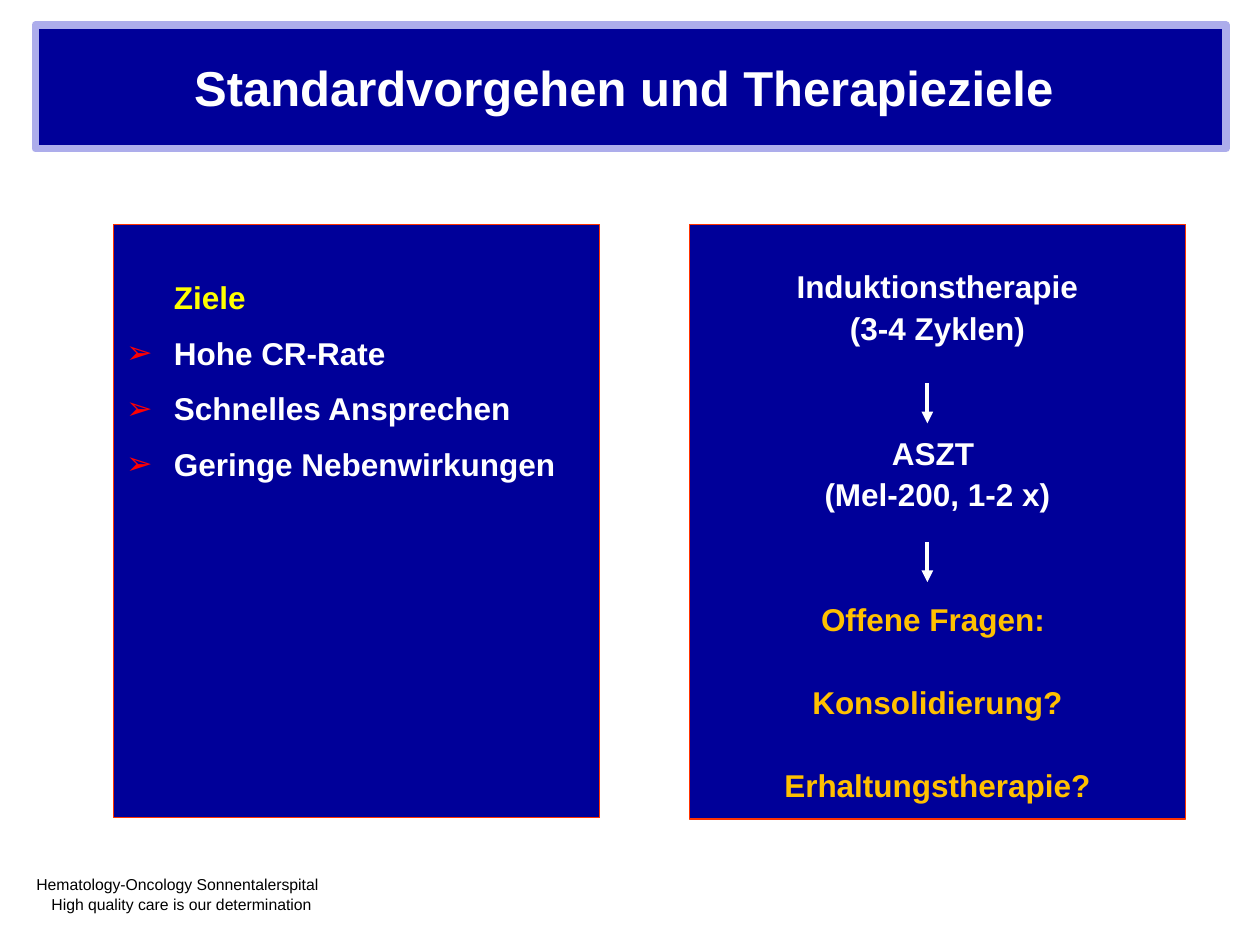
from dataclasses import dataclass

from lxml.etree import SubElement
from pptx import Presentation
from pptx.dml.color import RGBColor
from pptx.enum.shapes import MSO_CONNECTOR, MSO_SHAPE
from pptx.enum.text import MSO_ANCHOR, MSO_AUTO_SIZE, PP_ALIGN
from pptx.oxml.ns import qn
from pptx.util import Inches, Pt

NAVY, WHITE, BLACK = "000099", "FFFFFF", "000000"
LAVENDER, ORANGE_RED, RED = "ADADEB", "FF3300", "FF0000"
YELLOW, AMBER = "FFFF00", "FFC000"
LINE_PITCH = 23.8


@dataclass
class Line:
    text: str
    color: str = WHITE
    space_before: float = 0
    indent: float = 0
    bullet: str = ""


GOALS = [Line("Ziele", YELLOW, indent=0.38)] + [
    Line(text, space_before=3.6, indent=0.38, bullet="➢")
    for text in ("Hohe CR-Rate", "Schnelles Ansprechen", "Geringe Nebenwirkungen")
]
THERAPY_STEPS = [
    Line("Induktionstherapie"),
    Line("(3-4 Zyklen)"),
    Line("ASZT ", space_before=2 * LINE_PITCH),
    Line("(Mel-200, 1-2 x)"),
    Line("Offene Fragen: ", AMBER, 2 * LINE_PITCH),
    Line("Konsolidierung?", AMBER, LINE_PITCH),
    Line("Erhaltungstherapie?", AMBER, LINE_PITCH),
]
FOOTER = [
    Line("Hematology-Oncology Sonnentalerspital", BLACK, indent=0.19),
    Line("High quality care is our determination", BLACK, space_before=0.5, indent=0.31),
]


def rgb(color: str) -> RGBColor:
    return RGBColor.from_string(color)


def place(shape, left: float, top: float, width: float, height: float) -> None:
    shape.left, shape.top = Inches(left), Inches(top)
    shape.width, shape.height = Inches(width), Inches(height)


def style_box(shape, line_color: str, line_width: float) -> None:
    shape.fill.solid()
    shape.fill.fore_color.rgb = rgb(NAVY)
    shape.line.color.rgb = rgb(line_color)
    shape.line.width = Pt(line_width)


def set_bullet(paragraph, indent: float, bullet: str) -> None:
    properties = paragraph._p.get_or_add_pPr()
    properties.set("marL", str(Inches(indent)))
    properties.set("indent", str(-Inches(indent) if bullet else 0))
    if not bullet:
        SubElement(properties, qn("a:buNone"))
        return
    bullet_color = SubElement(properties, qn("a:buClr"))
    SubElement(bullet_color, qn("a:srgbClr"), val=RED)
    SubElement(properties, qn("a:buFont"), typeface="Arial")
    SubElement(properties, qn("a:buChar"), char=bullet)


def write_text(shape, lines: list[Line], *, size: float = 18, bold: bool = True,
               align=PP_ALIGN.LEFT, spacing: float = 1.0,
               anchor=MSO_ANCHOR.TOP, top_inset: float = 0.05) -> None:
    frame = shape.text_frame
    frame.word_wrap = True
    frame.auto_size = MSO_AUTO_SIZE.NONE
    frame.vertical_anchor = anchor
    frame.margin_top = Inches(top_inset)
    for index, line in enumerate(lines):
        paragraph = frame.add_paragraph() if index else frame.paragraphs[0]
        paragraph.alignment = align
        paragraph.line_spacing = spacing
        paragraph.space_before = Pt(line.space_before)
        set_bullet(paragraph, line.indent, line.bullet)
        run = paragraph.add_run()
        run.text = line.text
        run.font.name = "Arial"
        run.font.size = Pt(size)
        run.font.bold = bold
        run.font.color.rgb = rgb(line.color)


def add_down_arrow(slide, x: float, top: float, length: float) -> None:
    arrow = slide.shapes.add_connector(
        MSO_CONNECTOR.STRAIGHT, Inches(x), Inches(top), Inches(x), Inches(top + length))
    arrow.line.color.rgb = rgb(WHITE)
    arrow.line.width = Pt(2.25)
    SubElement(arrow.line._get_or_add_ln(), qn("a:tailEnd"), type="triangle")
    SubElement(arrow._element.spPr, qn("a:effectLst"))


def main() -> None:
    presentation = Presentation()
    presentation.slide_width, presentation.slide_height = Inches(10), Inches(7.5)
    slide = presentation.slides.add_slide(presentation.slide_layouts[1])

    footer = slide.shapes.add_textbox(0, Inches(6.82), Inches(2.99), Inches(0.52))
    write_text(footer, FOOTER, size=9, bold=False, top_inset=0.12)

    title = slide.shapes.title
    place(title, 0.28, 0.2, 9.45, 0.98)
    style_box(title, LAVENDER, 4.25)
    SubElement(title.line._get_or_add_ln(), qn("a:round"))
    write_text(title, [Line("Standardvorgehen und Therapieziele ")], size=28,
               align=PP_ALIGN.CENTER, anchor=MSO_ANCHOR.MIDDLE)

    goals = slide.placeholders[1]
    place(goals, 0.9, 1.78, 3.86, 4.71)
    style_box(goals, ORANGE_RED, 0.75)
    write_text(goals, GOALS, spacing=1.3, top_inset=0.34)

    therapy = slide.shapes.add_shape(
        MSO_SHAPE.RECTANGLE, Inches(5.47), Inches(1.78), Inches(3.94), Inches(4.72))
    therapy.shadow.inherit = False
    style_box(therapy, ORANGE_RED, 0.75)
    write_text(therapy, THERAPY_STEPS, align=PP_ALIGN.CENTER, spacing=1.1, top_inset=0.31)

    for top in (3.04, 4.3):
        add_down_arrow(slide, 7.36, top, 0.32)

    presentation.save("out.pptx")


if __name__ == "__main__":
    main()
